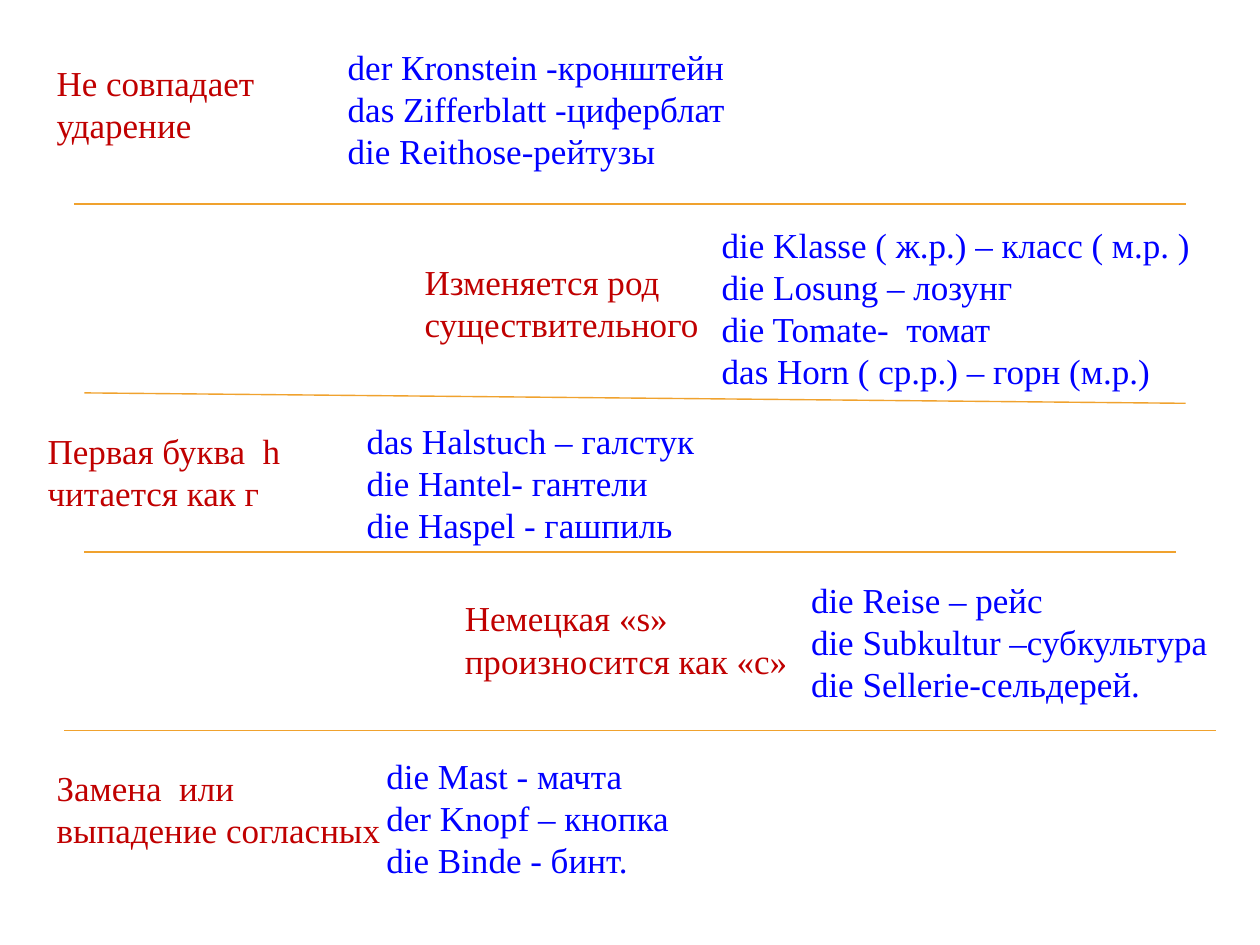
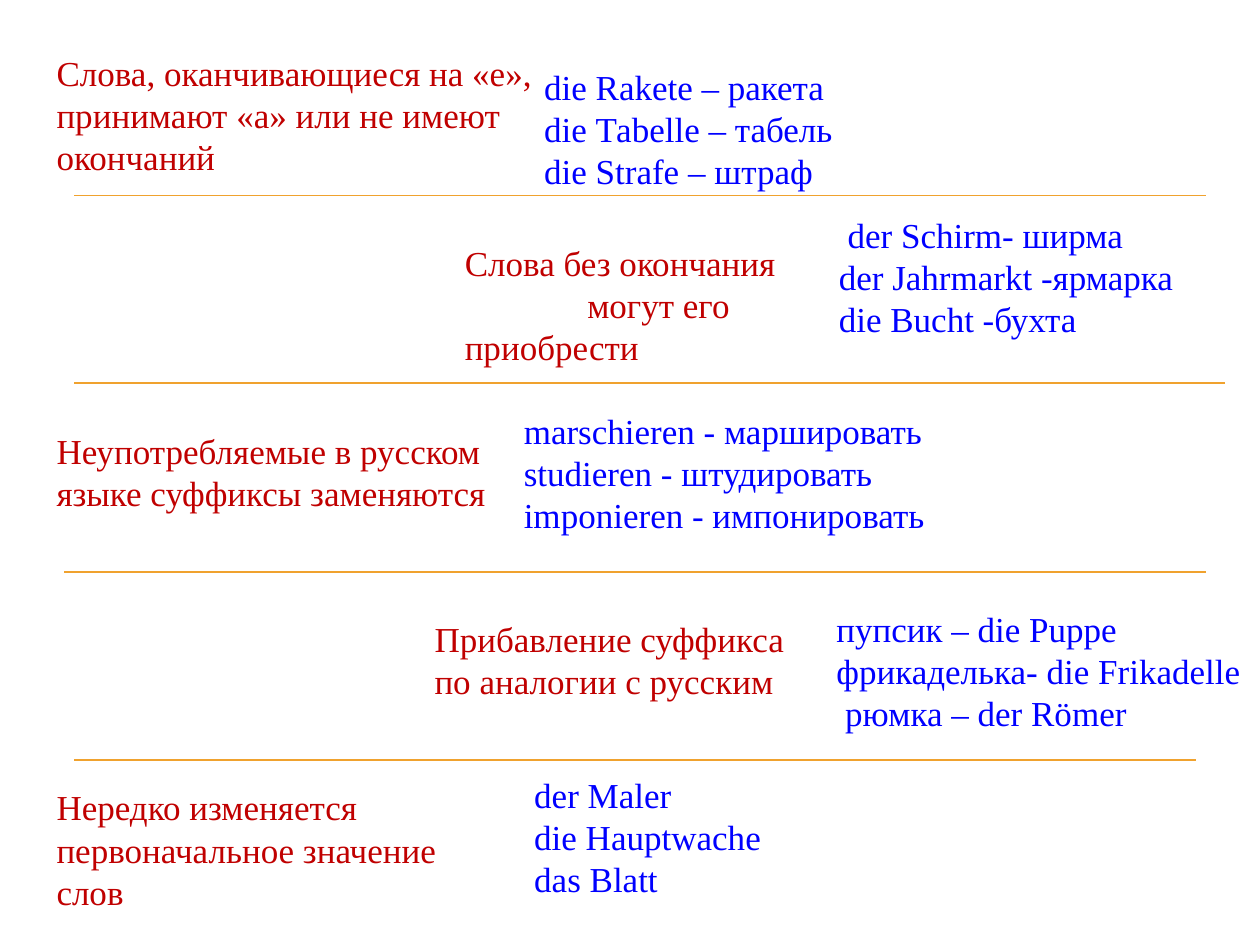
"""Two slides of German loanwords in Russian, grouped by sound and form changes."""
from lxml import etree
from pptx import Presentation
from pptx import util as u
from pptx.dml import color
from pptx.enum import shapes, text
from pptx.oxml import ns

COLORS = {"rule": "C00000", "words": "0000FF", "divider": "F0A22E"}
FONT = "Times New Roman"
TWO, THREE, FOUR = 1.96, 2.82, 4.52

SLIDES = [
    {
        "groups": [
            ((0.89, 1.12, 4.6, TWO), ["Не совпадает ударение"],
             (6.76, 0.79, 10.8, THREE),
             ["der Кronstein -кронштейн", "das Zifferblatt -циферблат", "die Reithose-рейтузы"]),
            ((8.31, 5.13, 6.63, TWO), ["Изменяется род существительного"],
             (14.3, 4.39, 10.21, FOUR),
             ["die Klasse ( ж.р.) – класс ( м.р. )", "die Losung – лозунг",
              "die Tomate-  томат", "das Horn ( ср.р.) – горн (м.р.)"]),
            ((0.71, 8.53, 5.59, TWO), ["Первая буква  h читается как г"],
             (7.14, 8.33, 8, THREE),
             ["das Halstuch – галстук", "die Наntel- гантели", "die Haspel - гашпиль"]),
            ((9.12, 11.91, 7.39, TWO), ["Немецкая «s» произносится как «с»"],
             (16.1, 11.53, 8.79, THREE),
             ["die Reise – рейс", "die Subkultur –субкультура", "die Sellerie-сельдерей."]),
            ((0.89, 15.32, 7.8, TWO), ["Замeна  или", "выпадение согласных"],
             (7.54, 15.09, 7.39, THREE),
             ["die Mast - мачта", "der Knopf – кнопка", "die Binde - бинт."]),
        ],
        "dividers": [(1.5, 4.11, 23.9, 4.11), (1.7, 7.92, 23.9, 8.13),
                     (1.7, 11.13, 23.7, 11.13), (1.3, 14.73, 24.51, 14.73)],
    },
    {
        "groups": [
            ((0.89, 0.91, 10.39, THREE),
             ["Слова, оканчивающиеся на «е», принимают «а» или не имеют окончаний"],
             (10.72, 1.19, 7.39, THREE),
             ["die Rakete – ракета", "die Таbelle – табель", "die Strafe – штраф"]),
            ((9.12, 4.75, 7.59, TWO), ["Слова без окончания", "могут его приобрести"],
             (16.66, 4.17, 7.8, FOUR),
             [" der Schirm- ширма", "der Jahrmarkt -ярмарка", "die Bucht -бухта"]),
            ((0.89, 8.53, 9.4, TWO), ["Неупотребляемые в русском языке суффиксы заменяются"],
             (10.31, 8.13, 9.6, THREE),
             ["marschieren - маршировать", "studieren - штудировать", "imponieren - импонировать"]),
            ((8.51, 12.32, 7.8, TWO), ["Прибавление суффикса по аналогии с русским"],
             (16.61, 12.12, 8.79, THREE),
             ["пупсик – die Рuрре", "фрикаделька- die Frikadеllе", " рюмка – der Römer"]),
            ((0.89, 15.72, 8.61, THREE), ["Нередко изменяется первоначальное значение слов"],
             (10.52, 15.47, 5.99, 3.58),
             ["der Maler", "die Hauptwache", "das Blatt"]),
        ],
        "dividers": [(1.5, 3.94, 24.31, 3.94), (1.5, 7.72, 24.69, 7.72),
                     (1.3, 11.53, 24.31, 11.53), (1.5, 15.32, 24.1, 15.32)],
    },
]
INDENTS = {"могут его приобрести": 2.47}


def add_text(s, lines, box, fill, size=20, font=FONT):
    sp = s.shapes.add_textbox(*[u.Cm(v) for v in box])
    tf = sp.text_frame
    tf.word_wrap = True
    tf.auto_size = text.MSO_AUTO_SIZE.SHAPE_TO_FIT_TEXT
    for i, line in enumerate(lines):
        p = tf.paragraphs[0] if i == 0 else tf.add_paragraph()
        if line in INDENTS:
            p._p.get_or_add_pPr().set("indent", str(u.Cm(INDENTS[line])))
        r = p.add_run()
        r.text = line
        r.font.size = u.Pt(size)
        r.font.name = font
        r.font.color.rgb = color.RGBColor.from_string(COLORS[fill])


prs = Presentation()
prs.slide_width = u.Cm(25.4)
prs.slide_height = u.Cm(19.05)

for content in SLIDES:
    s = prs.slides.add_slide(prs.slide_layouts[6])
    for rule_box, rule, words_box, words in content["groups"]:
        add_text(s, rule, rule_box, "rule")
        add_text(s, words, words_box, "words")
    for ends in content["dividers"]:
        cx = s.shapes.add_connector(shapes.MSO_CONNECTOR.STRAIGHT, *[u.Cm(v) for v in ends])
        cx.line.color.rgb = color.RGBColor.from_string(COLORS["divider"])
        cx.line.width = u.Pt(0.79)
        etree.SubElement(cx._element.spPr, ns.qn("a:effectLst"))

prs.save("out.pptx")
